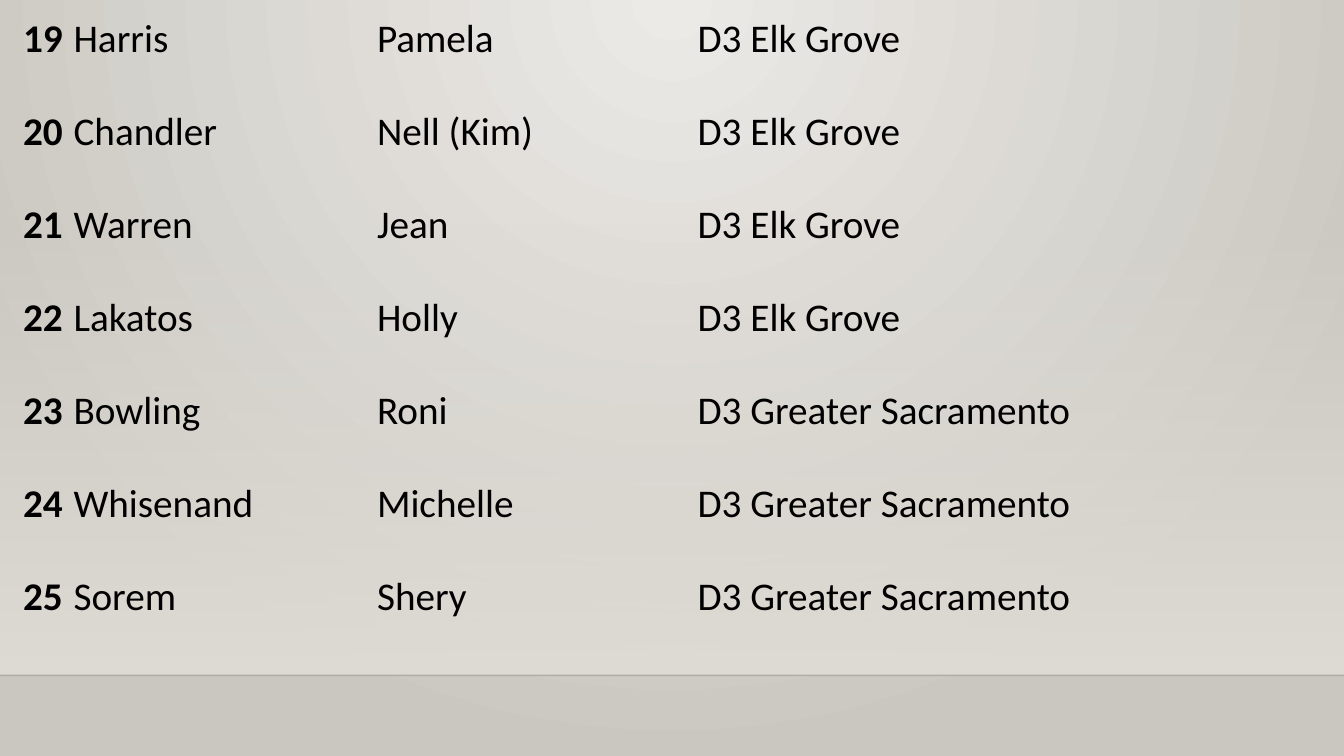
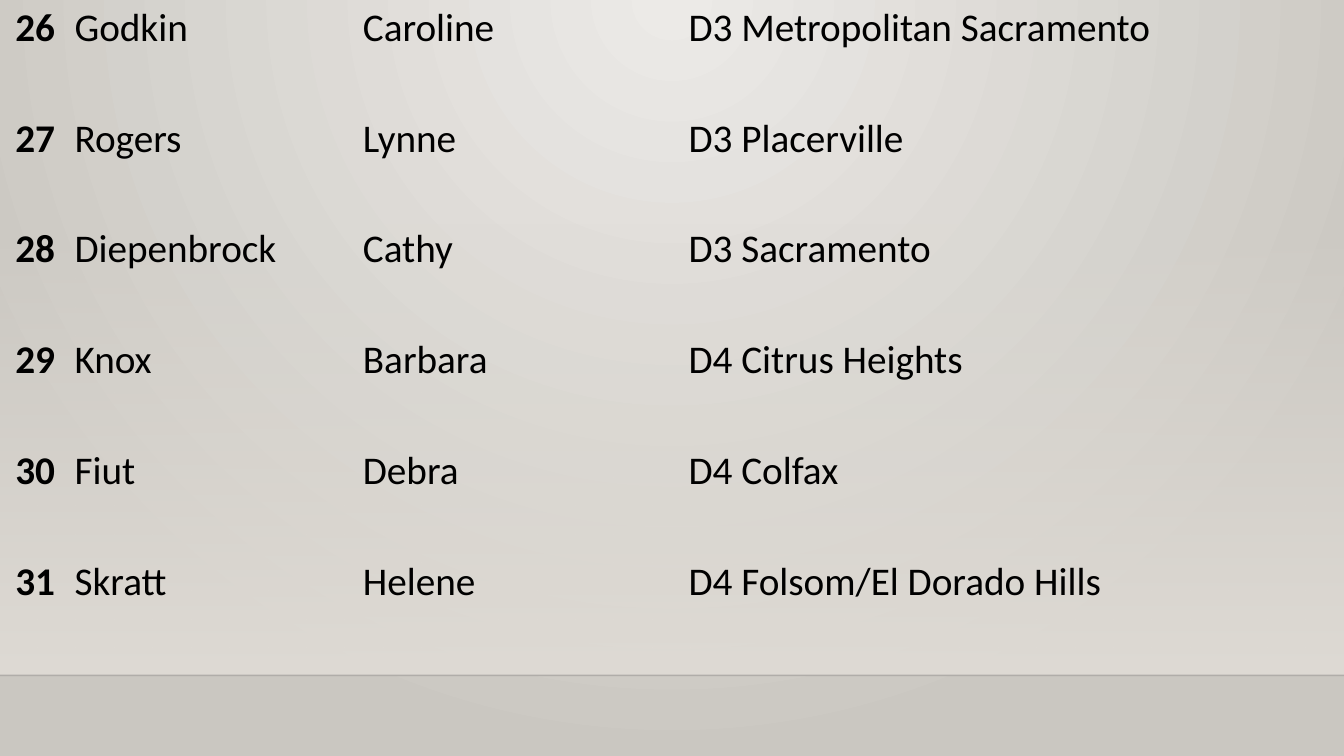
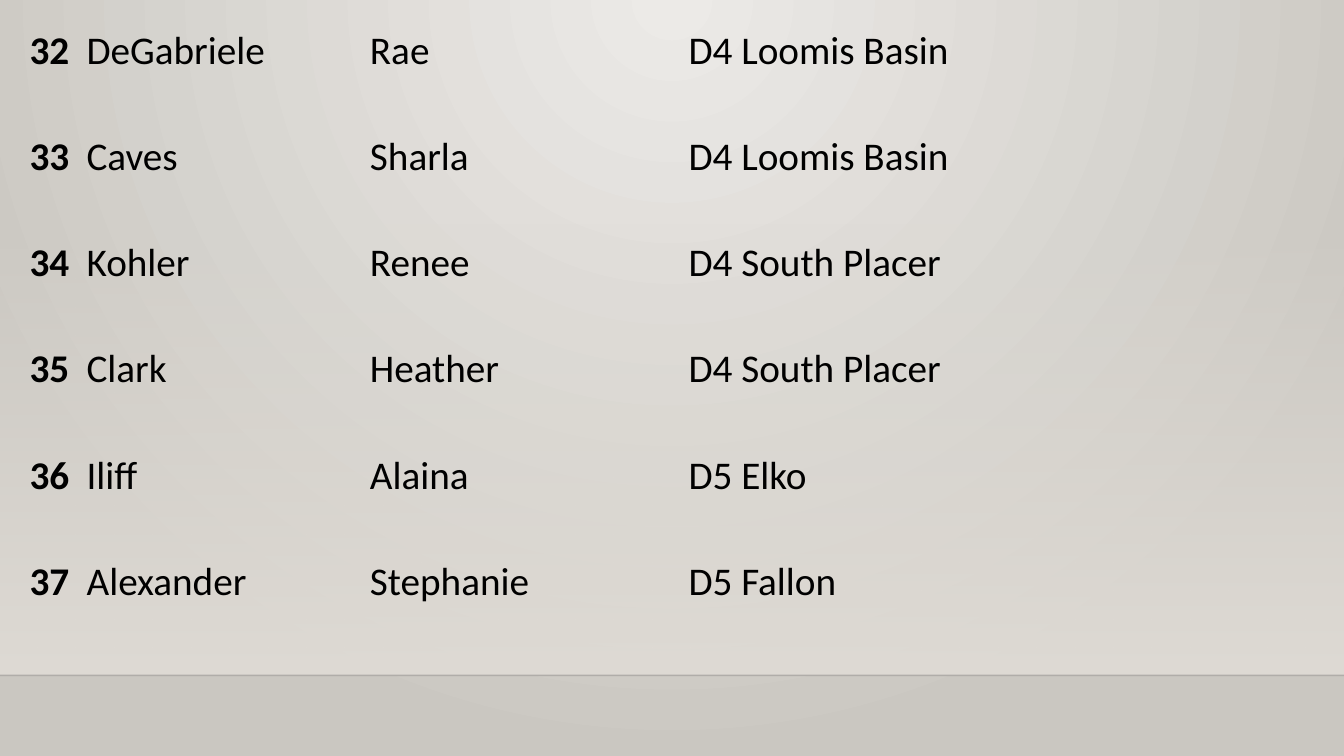
from lxml.etree import SubElement
from pptx import Presentation
from pptx.dml.color import RGBColor
from pptx.enum.shapes import MSO_CONNECTOR, MSO_SHAPE
from pptx.enum.text import MSO_ANCHOR, PP_ALIGN
from pptx.oxml import parse_xml
from pptx.oxml.ns import nsdecls, qn
from pptx.util import Inches, Pt

WIDE, HIGH = 13.33, 7.5
FONT = "Calibri"
COLORS = {
    "text": "000000",
    "rule": "000001",
    "glow": "ECEAE7",
    "edge": "CAC7C1",
    "band": "DFDBD5",
}
PLAIN = "{2D5ABB26-0587-4C30-8999-92F81FD0307C}"  # table style with no grid

ROSTERS = [
    {
        "box": (0.2, 0.12, 13.04, 6.46),
        "cols": (0.5, 3.01, 3.18, 5.43, 0.92),
        "inset": 0.03,
        "align": PP_ALIGN.LEFT,
        "first": 19,
        "people": [
            ("Harris", "Pamela", "D3 Elk Grove"),
            ("Chandler", "Nell (Kim)", "D3 Elk Grove"),
            ("Warren", "Jean", "D3 Elk Grove"),
            ("Lakatos", "Holly", "D3 Elk Grove"),
            ("Bowling", "Roni", "D3 Greater Sacramento"),
            ("Whisenand", "Michelle", "D3 Greater Sacramento"),
            ("Sorem", "Shery", "D3 Greater Sacramento"),
        ],
    },
    {
        "box": (0, 0, 13.25, 6.6),
        "cols": (0.7, 2.86, 3.23, 5.27, 1.2),
        "inset": 0.04,
        "align": PP_ALIGN.CENTER,
        "first": 26,
        "people": [
            ("Godkin", "Caroline", "D3 Metropolitan Sacramento"),
            ("Rogers", "Lynne", "D3 Placerville"),
            ("Diepenbrock", "Cathy", "D3 Sacramento"),
            ("Knox", "Barbara", "D4 Citrus Heights"),
            ("Fiut", "Debra", "D4 Colfax"),
            ("Skratt", "Helene", "D4 Folsom/El Dorado Hills"),
        ],
    },
    {
        "box": (0.16, 0.23, 12.94, 6.32),
        "cols": (0.66, 2.81, 3.16, 3.16, 3.16),
        "inset": 0.04,
        "align": PP_ALIGN.CENTER,
        "first": 32,
        "people": [
            ("DeGabriele", "Rae", "D4 Loomis Basin"),
            ("Caves", "Sharla", "D4 Loomis Basin"),
            ("Kohler", "Renee", "D4 South Placer"),
            ("Clark", "Heather", "D4 South Placer"),
            ("Iliff", "Alaina", "D5 Elko"),
            ("Alexander", "Stephanie", "D5 Fallon"),
        ],
    },
]


def blend(start, end, shape, alpha=100):
    """Return a gradient fill; alpha is the opacity of its start in percent."""
    return parse_xml(
        f'<a:gradFill {nsdecls("a")} rotWithShape="1"><a:gsLst>'
        f'<a:gs pos="0"><a:srgbClr val="{COLORS[start]}">'
        f'<a:alpha val="{alpha * 1000}"/></a:srgbClr></a:gs>'
        f'<a:gs pos="100000"><a:srgbClr val="{COLORS[end]}"/></a:gs>'
        f"</a:gsLst>{shape}</a:gradFill>"
    )


def paint_back(master):
    glow = ('<a:path path="circle"><a:fillToRect l="43000" t="0" '
            'r="43000" b="100000"/></a:path>')
    back = master.element.xpath("./p:cSld/p:bg")[0]
    for old in list(back):
        back.remove(old)
    props = SubElement(back, qn("p:bgPr"))
    props.append(blend("glow", "edge", glow))
    SubElement(props, qn("a:effectLst"))


def add_floor(master, slide, top, height):
    """Draw the fading band and its rule, then move both to the master."""
    base = top + height
    band = slide.shapes.add_shape(
        MSO_SHAPE.RECTANGLE, 0, Inches(top), Inches(WIDE), Inches(height))
    band.shadow.inherit = False
    band.line.fill.background()
    band.fill.solid()
    props = band.element.spPr
    props.replace(props.find(qn("a:solidFill")),
                  blend("band", "band", '<a:lin ang="5400000" scaled="0"/>', 0))

    rule = slide.shapes.add_connector(
        MSO_CONNECTOR.STRAIGHT, 0, Inches(base), Inches(WIDE), Inches(base))
    rule.line.width = Pt(1)
    rule.line.color.rgb = RGBColor.from_string(COLORS["rule"])
    tint = rule.element.xpath(".//a:srgbClr")[0]
    SubElement(tint, qn("a:alpha")).set("val", "20000")
    SubElement(rule.element.spPr, qn("a:effectLst"))

    tree = master.element.xpath("./p:cSld/p:spTree")[0]
    for spot, part in enumerate((band, rule)):
        part.element.xpath(".//p:cNvPr")[0].set("id", str(100 + spot))
        tree.insert(2 + spot, part.element)


def write(cell, text, size=28, bold=False, align=PP_ALIGN.LEFT):
    para = cell.text_frame.paragraphs[0]
    para.alignment = align
    run = para.add_run()
    run.text = text
    run.font.name = FONT
    run.font.size = Pt(size)
    run.font.bold = bold
    run.font.color.rgb = RGBColor.from_string(COLORS["text"])


def add_roster(slide, box, cols, inset, align, first, people):
    frame = slide.shapes.add_table(
        len(people), len(cols), *[Inches(side) for side in box])
    table = frame.table
    table.first_row = table.horz_banding = False
    frame.element.xpath(".//a:tableStyleId")[0].text = PLAIN
    for col, width in zip(table.columns, cols):
        col.width = Inches(width)
    for row in table.rows:
        row.height = Inches(box[3] / len(people))
    for cell in table.iter_cells():
        cell.fill.background()
        cell.vertical_anchor = MSO_ANCHOR.TOP
        cell.margin_left = cell.margin_right = Inches(inset)
        cell.margin_top = cell.margin_bottom = Inches(inset)
    for line, person in enumerate(people):
        write(table.cell(line, 0), str(first + line), bold=True, align=align)
        for col, text in enumerate(person, 1):
            write(table.cell(line, col), text)


def main():
    deck = Presentation()
    deck.slide_width, deck.slide_height = Inches(WIDE), Inches(HIGH)
    blank = deck.slide_layouts[6]
    slides = [deck.slides.add_slide(blank) for _ in ROSTERS]
    paint_back(deck.slide_master)
    add_floor(deck.slide_master, slides[0], 2.21, 4.49)
    for slide, roster in zip(slides, ROSTERS):
        add_roster(slide, **roster)
    deck.save("out.pptx")


if __name__ == "__main__":
    main()
